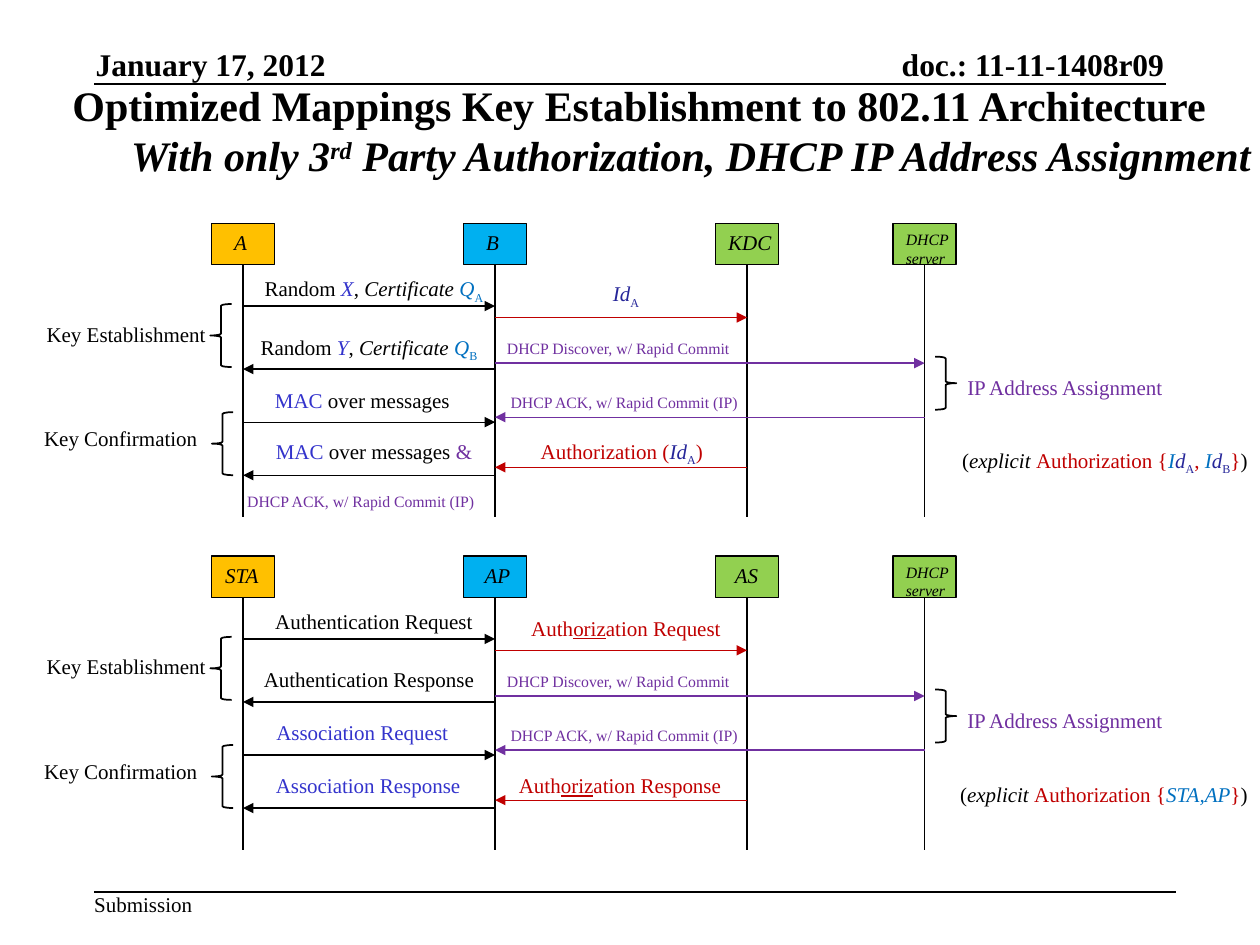
from lxml import etree
from pptx import Presentation
from pptx.dml.color import RGBColor
from pptx.enum import shapes, text
from pptx.oxml import ns
from pptx.util import Cm, Pt

HUES = {"black": "000000", "amber": "FFC000", "sky": "00B0F0", "green": "92D050",
        "red": "C00000", "plum": "7030A0", "blue": "3333CC", "navy": "262699",
        "teal": "0070C0"}
SIDES = {"l": text.PP_ALIGN.LEFT, "c": text.PP_ALIGN.CENTER, "r": text.PP_ALIGN.RIGHT}
SHIFT = {"sub": "-25000", "sup": "30000"}

deck = Presentation()
deck.slide_width, deck.slide_height = Cm(25.4), Cm(19.05)
slide = deck.slides.add_slide(deck.slide_layouts[5])
tree = slide.shapes


def write(*paras, at, box=None, size=12, sides="l", wrap=False, inset=None, low=False):
    """Each paragraph is a list of (words, style); a style names a hue, b, i, u, sub or sup."""
    spot = [Cm(n) for n in at]
    box = box or tree.add_textbox(*spot)
    box.left, box.top, box.width, box.height = spot
    frame = box.text_frame
    frame.word_wrap = wrap
    frame.auto_size = text.MSO_AUTO_SIZE.SHAPE_TO_FIT_TEXT
    frame.vertical_anchor = text.MSO_ANCHOR.BOTTOM if low else text.MSO_ANCHOR.TOP
    if inset is not None:
        frame.margin_left = frame.margin_right = Cm(inset)
        frame.margin_top = frame.margin_bottom = Cm(inset)
    for k, (runs, side) in enumerate(zip(paras, sides)):
        para = frame.add_paragraph() if k else frame.paragraphs[0]
        para.alignment = SIDES[side]
        for words, style in runs:
            run = para.add_run()
            run.text = words
            font = run.font
            font.name, font.size = "Times New Roman", Pt(size)
            marks = style.split()
            font.bold, font.italic, font.underline = (m in marks for m in "biu")
            hue = next((m for m in marks if m in HUES), "black")
            font.color.rgb = RGBColor.from_string(HUES[hue])
            for mark in SHIFT.keys() & set(marks):
                run._r.get_or_add_rPr().set("baseline", SHIFT[mark])


def draw(x1, y1, x2, y2, hue="black", wide=0.75, arrow=False):
    line = tree.add_connector(shapes.MSO_CONNECTOR.STRAIGHT, Cm(x1), Cm(y1), Cm(x2), Cm(y2))
    line.line.color.rgb = RGBColor.from_string(HUES[hue])
    line.line.width = Pt(wide)
    if arrow:
        etree.SubElement(line.line._get_or_add_ln(), ns.qn("a:tailEnd"), type="triangle")
    etree.SubElement(line._element.spPr, ns.qn("a:effectLst"))
    return line


# Header, footer and title
write([("doc.: 11-11-1408r09", "b")], at=(16.84, 0.91, 6.63, 0.76), size=18, sides="r",
      inset=0, low=True)
write([("January 17, 2012", "b")], at=(1.93, 0.91, 4.67, 0.76), size=18, inset=0, low=True)
write([("Submission", "")], at=(1.9, 17.98, 2.01, 0.51), inset=0)
draw(1.9, 1.7, 23.5, 1.7, wide=1)
draw(1.9, 17.98, 23.7, 17.98, wide=1)
write([("Optimized Mappings Key Establishment to 802.11 Architecture", "b")],
      [("With only 3", "b i"), ("rd", "b i sup"),
       (" Party Authorization, DHCP IP Address Assignment", "b i")],
      at=(0.3, 1.47, 25.17, 2.31), box=tree.title, size=24, sides="cr")

# Lanes and messages shared by both diagrams; heights count from the top of the lane boxes
LANES = [(4.9, "amber"), (9.98, "sky"), (15.06, "green"), (18.64, "green")]
SENDS = [(0, 1, 1.67, "black"), (1, 0, 2.94, "black"), (0, 1, 4.01, "black"),
         (1, 0, 5.08, "black"), (1, 2, 1.9, "red"), (2, 1, 4.92, "red"),
         (1, 3, 2.82, "plum"), (3, 1, 3.91, "plum")]
LEFT, RIGHT = shapes.MSO_SHAPE.LEFT_BRACE, shapes.MSO_SHAPE.RIGHT_BRACE
BRACES = [(LEFT, 4.24, 1.63, 1.27), (LEFT, 4.27, 3.81, 1.27), (RIGHT, 18.85, 2.69, 1.07)]
ACK = [("DHCP ACK, w/ Rapid Commit (IP) ", "plum")]

# Labels: runs, left, height, width, side, wrap, size
SHARED = [
    ([("DHCP server", "i")], 18.01, 0, 1.6, "l", True, 9),
    ([("DHCP Discover, w/ Rapid Commit ", "plum")], 9.96, 2.21, 5.08, "c", True, 9),
    (ACK, 9.98, 3.3, 5.28, "c", True, 9),
    ([("Key Establishment", "")], 0.69, 1.85, 3.76, "l", False, 12),
    ([("Key Confirmation", "")], 0.64, 3.96, 3.63, "l", False, 12),
    ([("IP Address Assignment", "plum")], 19.25, 2.92, 4.5, "l", False, 12),
]
KEYS = [
    ([("A", "i")], 4.47, 0, 0.76, "l", False, 12),
    ([("B", "i")], 9.55, 0, 0.76, "l", False, 12),
    ([("KDC", "i")], 14.43, 0, 1.6, "l", True, 12),
    ([("Random ", ""), ("X", "blue i"), (", ", ""), ("Certificate ", "i"),
      ("Q", "teal i"), ("A", "teal sub")], 4.9, 0.94, 5.28, "c", True, 12),
    ([("Random ", ""), ("Y", "blue i"), (", ", ""), ("Certificate ", "i"),
      ("Q", "teal i"), ("B", "teal sub")], 4.9, 2.11, 5.08, "c", True, 12),
    ([("MAC", "blue"), (" over messages", "")], 5.11, 3.18, 4.39, "c", True, 12),
    ([("MAC", "blue"), (" over messages ", ""), ("&", "plum")],
     5.31, 4.22, 4.52, "l", False, 12),
    (ACK, 4.67, 5.28, 5.28, "c", True, 9),
    ([("Id", "navy i"), ("A", "navy sub")], 9.98, 1.04, 5.28, "c", True, 12),
    ([("Authorization (", "red"), ("Id", "navy i"), ("A", "navy sub"), (")", "red")],
     10.39, 4.22, 4.29, "c", True, 12),
    ([("(", ""), ("explicit ", "i"), ("Authorization {", "red"), ("I", "teal i"),
      ("d", "navy i"), ("A", "navy sub"), (", ", "red"), ("I", "teal i"), ("d", "navy i"),
      ("B", "navy sub"), ("}", "red"), (")", "")], 19, 4.39, 6.4, "r", False, 12),
]
FRAMES = [
    ([("STA", "i")], 4.24, 0, 1.27, "c", True, 12),
    ([("AP", "i")], 9.32, 0, 1.42, "c", True, 12),
    ([("AS", "i")], 14.43, 0, 1.24, "c", True, 12),
    ([("Authentication Request", "")], 4.9, 0.94, 5.28, "c", True, 12),
    ([("Authentication Response", "")], 4.9, 2.11, 5.08, "c", True, 12),
    ([("Association Request", "blue")], 5.11, 3.18, 4.39, "c", True, 12),
    ([("Association Response", "blue")], 5.31, 4.24, 4.29, "l", False, 12),
    ([("Auth", "red"), ("oriz", "red u"), ("ation Request", "red")],
     9.98, 1.07, 5.28, "c", True, 12),
    ([("Auth", "red"), ("oriz", "red u"), ("ation Response", "red")],
     9.96, 4.24, 5.08, "c", True, 12),
    ([("(", ""), ("explicit ", "i"), ("Authorization {", "red"), ("STA,AP", "teal i"),
      ("}", "red"), (")", "")], 19.02, 4.42, 6.38, "r", False, 12),
]

# The two sequence diagrams
for top, labels in ((4.5, KEYS), (11.21, FRAMES)):
    for x, hue in LANES:
        node = tree.add_shape(shapes.MSO_SHAPE.RECTANGLE, Cm(x - 0.635), Cm(top),
                              Cm(1.27), Cm(0.84))
        node.shadow.inherit = False
        node.fill.solid()
        node.fill.fore_color.rgb = RGBColor.from_string(HUES[hue])
        node.line.color.rgb = RGBColor.from_string(HUES["black"])
        node.line.width = Pt(0.75)
        draw(x, top + 0.84, x, top + 5.92).begin_connect(node, 2)
    for src, dest, y, hue in SENDS:
        draw(LANES[src][0], top + y, LANES[dest][0], top + y, hue, arrow=True)
    for kind, x, y, high in BRACES:
        brace = tree.add_shape(kind, Cm(x), Cm(top + y), Cm(0.43), Cm(high))
        brace.shadow.inherit = False
        brace.fill.background()
        brace.line.color.rgb = RGBColor.from_string(HUES["black"])
        brace.line.width = Pt(1)
    for runs, x, y, wide, side, wrap, size in SHARED + labels:
        write(runs, at=(x, top + y, wide, 0.76), size=size, sides=side, wrap=wrap)

deck.save("out.pptx")
